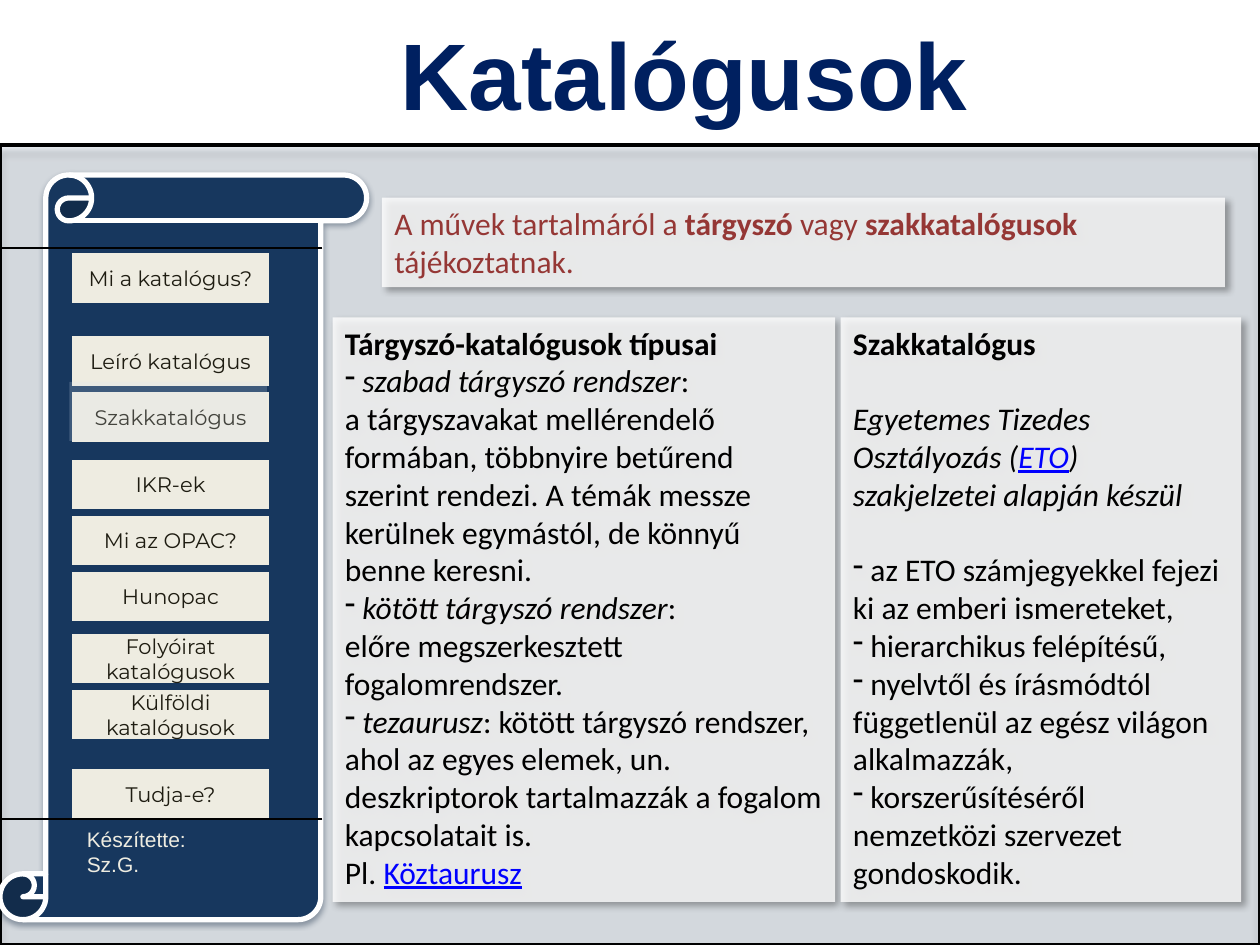
from lxml import etree
from pptx import Presentation
from pptx.dml.color import RGBColor
from pptx.enum.shapes import MSO_CONNECTOR, MSO_SHAPE
from pptx.enum.text import MSO_ANCHOR, PP_ALIGN
from pptx.oxml.ns import qn
from pptx.util import Pt

RECT = MSO_SHAPE.RECTANGLE
SCROLL = MSO_SHAPE.VERTICAL_SCROLL
BUTTON = MSO_SHAPE.ACTION_BUTTON_CUSTOM
STRAIGHT = MSO_CONNECTOR.STRAIGHT
LEFT, CENTER = PP_ALIGN.LEFT, PP_ALIGN.CENTER
TOP, MIDDLE = MSO_ANCHOR.TOP, MSO_ANCHOR.MIDDLE

BOLD = {"bold": True}
ITALIC = {"italic": True}
LINK = {"color": "0000FF", "underline": True}
TITLE = {"name": "Arial", "size": Pt(54), "bold": True, "color": "002060"}
CREDIT = {"name": "Arial", "size": Pt(12), "color": "EEECE1"}
LABEL = {"name": "Montserrat", "size": Pt(12), "color": "1E1C11"}
BODY = {"name": "Calibri", "size": Pt(18), "color": "000000"}
INTRO = {**BODY, "color": "953735"}
CARD_SHADOW = ("000000", 40, 4, 3, 45)
BLANK_LINE = 21.6


def rgb(value):
    return RGBColor.from_string(value)


def add_alpha(color, percent):
    etree.SubElement(color, qn("a:alpha"), val=str(percent * 1000))


def add_shadow(sp, color, alpha, blur, dist, angle):
    effects = sp._element.spPr.find(qn("a:effectLst"))
    outer = etree.SubElement(effects, qn("a:outerShdw"), blurRad=str(Pt(blur)),
                             dist=str(Pt(dist)), dir=str(angle * 60000),
                             algn="ctr", rotWithShape="0")
    add_alpha(etree.SubElement(outer, qn("a:srgbClr"), val=color), alpha)


def para(*runs, bullet=False, before=0):
    """Describe a paragraph; each run is (text, format)."""
    return runs, bullet, before


class SlideBuilder:
    def __init__(self, slide):
        self.shapes = slide.shapes

    def fill_text(self, tf, paras, style, align=LEFT, anchor=TOP, wrap=True):
        tf.word_wrap = wrap
        tf.vertical_anchor = anchor
        for i, (runs, bullet, before) in enumerate(paras):
            p = tf.paragraphs[0] if i == 0 else tf.add_paragraph()
            p.alignment = align
            p.space_before = Pt(before)
            if bullet:
                pPr = p._p.get_or_add_pPr()
                pPr.set("marL", "0")
                pPr.set("indent", "0")
                etree.SubElement(pPr, qn("a:buChar"), char="-")
            for text, fmt in runs:
                for n, line in enumerate(text.split("\n")):
                    if n:
                        p.add_line_break()
                    self.add_run(p, line, {**style, **fmt})

    def add_run(self, p, text, fmt):
        r = p.add_run()
        r.text = text
        for name, value in fmt.items():
            if name == "color":
                r.font.color.rgb = rgb(value)
            else:
                setattr(r.font, name, value)

    def text(self, box, paras, style, **layout):
        sp = self.shapes.add_textbox(*map(Pt, box))
        self.fill_text(sp.text_frame, paras, style, **layout)

    def shape(self, kind, box, fill, alpha=100, line=None, shadow=None):
        sp = self.shapes.add_shape(kind, *map(Pt, box))
        sp.shadow.inherit = False
        sp.fill.solid()
        sp.fill.fore_color.rgb = rgb(fill)
        if alpha < 100:
            solid = sp._element.spPr.find(qn("a:solidFill"))
            add_alpha(solid[0], alpha)
        if line:
            color, width = line
            sp.line.color.rgb = rgb(color)
            sp.line.width = Pt(width)
        else:
            sp.line.fill.background()
        if shadow:
            add_shadow(sp, *shadow)
        return sp

    def button(self, top, label):
        sp = self.shape(BUTTON, (41, top, 113, 28.2), "EEECE1")
        self.fill_text(sp.text_frame, [para((label, {}))], LABEL,
                       align=CENTER, anchor=MIDDLE)

    def card(self, box, paras, style):
        sp = self.shape(RECT, box, "FFFFFF", 80, shadow=CARD_SHADOW)
        self.fill_text(sp.text_frame, paras, style)

    def rule(self, y, right):
        line = self.shapes.add_connector(STRAIGHT, Pt(right), Pt(y), Pt(0), Pt(y))
        line.line.color.rgb = rgb("000000")
        line.line.width = Pt(1.25)
        etree.SubElement(line._element.spPr, qn("a:effectLst"))


MENU = {
    144.7: ["Mi a katalógus?"],
    192.2: ["Leíró katalógus", "Szakkatalógus"],
    262.8: ["IKR-ek", "Mi az OPAC?", "Hunopac"],
    362.2: ["Folyóirat katalógusok", "Külföldi katalógusok"],
    439.4: ["Tudja-e?"],
}
MENU_STEP = 31.9

INTRO_TEXT = [para(("A művek tartalmáról a ", {}), ("tárgyszó ", BOLD), ("vagy", {}),
                   (" szakkatalógusok ", BOLD), ("tájékoztatnak.", {}))]

SUBJECT_TEXT = [
    para(("Tárgyszó-katalógusok típusai", BOLD)),
    para((" szabad tárgyszó rendszer", ITALIC),
         (": \na tárgyszavakat mellérendelő formában, többnyire betűrend szerint "
          "rendezi. A témák messze kerülnek egymástól, de könnyű benne keresni.", {}),
         bullet=True),
    para((" kötött tárgyszó rendszer", ITALIC),
         (": \nelőre megszerkesztett fogalomrendszer.", {}), bullet=True),
    para((" tezaurusz", ITALIC),
         (": kötött tárgyszó rendszer, ahol az egyes elemek, un. deszkriptorok "
          "tartalmazzák a fogalom kapcsolatait is.", {}), bullet=True),
    para(("Pl. ", {}), ("Köztaurusz", LINK)),
]

CLASS_TEXT = [
    para(("Szakkatalógus", BOLD)),
    para(("Egyetemes Tizedes Osztályozás (", ITALIC), ("ETO", {**ITALIC, **LINK}),
         (") szakjelzetei alapján készül", ITALIC), before=BLANK_LINE),
    para((" az ETO számjegyekkel fejezi ki az emberi ismereteket,", {}),
         bullet=True, before=BLANK_LINE),
    para((" hierarchikus felépítésű,", {}), bullet=True),
    para((" nyelvtől és írásmódtól függetlenül az egész világon alkalmazzák,", {}),
         bullet=True),
    para((" korszerűsítéséről nemzetközi szervezet gondoskodik.", {}), bullet=True),
]


def main():
    prs = Presentation()
    prs.slide_width, prs.slide_height = Pt(720), Pt(540)
    s = SlideBuilder(prs.slides.add_slide(prs.slide_layouts[6]))

    s.shape(RECT, (0, 82.8, 720, 457.2), "DCE6F2", 42, ("000000", 2),
            ("000000", 46, 4, 4, 90))
    s.text((146, 5.8, 490, 72.7), [para(("Katalógusok", {}))], TITLE, align=CENTER)

    s.shape(SCROLL, (0, 100, 209.5, 425.5), "17375E", line=("FFFFFF", 3),
            shadow=("0F243E", 38, 3.1, 1.6, 90))
    for y in (141.8, 468):
        s.rule(y, 184.3)
    for top, labels in MENU.items():
        for i, label in enumerate(labels):
            s.button(top + i * MENU_STEP, label)
    s.text((42.5, 468.7, 73.4, 36), [para(("Készítette:", {})), para(("Sz.G.", {}))],
           CREDIT, wrap=False)
    s.shape(RECT, (39.6, 218.2, 113, 33.8), "DCE6F2", 20)

    s.card((190, 181.4, 287.3, 334.1), SUBJECT_TEXT, BODY)
    s.card((480.3, 181.4, 229, 334.1), CLASS_TEXT, BODY)
    s.card((218.2, 113, 481.7, 51.1), INTRO_TEXT, INTRO)

    prs.save("out.pptx")


if __name__ == "__main__":
    main()
